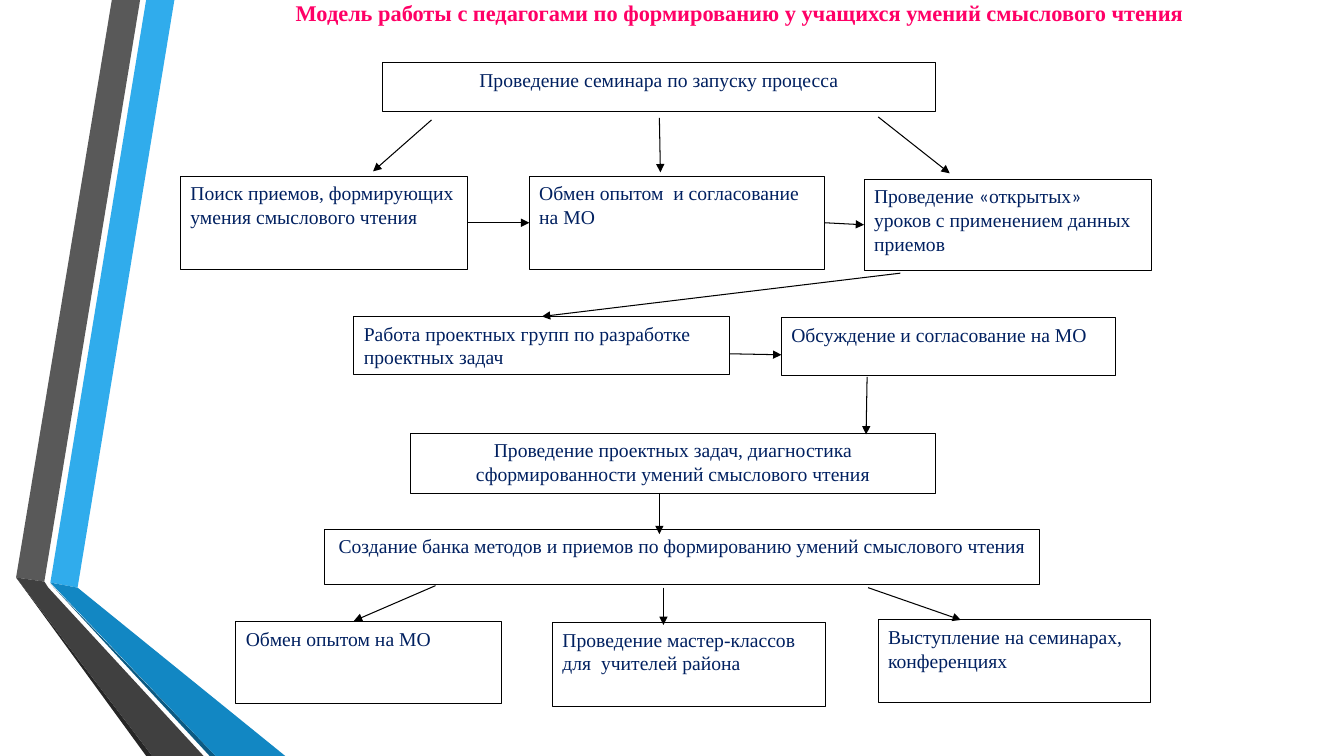
from itertools import groupby

from lxml.etree import SubElement
from pptx import Presentation
from pptx.dml.color import RGBColor
from pptx.enum.shapes import MSO_CONNECTOR, MSO_SHAPE
from pptx.enum.text import MSO_ANCHOR, MSO_AUTO_SIZE, PP_ALIGN
from pptx.oxml.ns import qn
from pptx.util import Inches, Pt

COLORS = {
    "title": "FF0066", "text": "002060", "line": "000000", "box": "FFFFFF",
    "blue": "30ACEC", "blue_fold": "1287C3", "blue_edge": "0C5A82",
    "gray": "595959", "gray_fold": "404040", "gray_edge": "262626",
}
FONT, QUOTE_FONT = "Times New Roman", "Calibri"
TOP, LEFT, BOTTOM, RIGHT = 0, 1, 2, 3


def rgb(name):
    return RGBColor.from_string(COLORS[name])


def grid(*cells):
    """Turn columns or rows of a 0.1 inch grid into lengths."""
    return [Inches(cell / 10) for cell in cells]


class FlowSlide:
    def __init__(self, prs):
        self.slide = prs.slides.add_slide(prs.slide_layouts[5])
        self.shapes = self.slide.shapes

    def style_run(self, r, size, color, font=FONT, bold=False):
        r.font.size, r.font.name, r.font.bold = Pt(size), font, bold
        r.font.color.rgb = rgb(color)

    def title(self, text, at):
        sp = self.shapes.title
        sp.left, sp.top, sp.width, sp.height = grid(*at)
        tf = sp.text_frame
        tf.text = text
        tf.word_wrap, tf.auto_size = True, MSO_AUTO_SIZE.NONE
        tf.vertical_anchor = MSO_ANCHOR.MIDDLE
        tf.margin_top = tf.margin_bottom = 0
        p = tf.paragraphs[0]
        p.alignment = PP_ALIGN.CENTER
        self.style_run(p.runs[0], 16, "title", bold=True)

    def ribbon(self, color, points):
        start, *rest = [grid(*point) for point in points]
        builder = self.shapes.build_freeform(*start)
        builder.add_line_segments(rest, close=True)
        sp = builder.convert_to_shape()
        sp.shadow.inherit = False
        sp.fill.solid()
        sp.fill.fore_color.rgb = rgb(color)
        sp.line.fill.background()

    def box(self, text, at, align=PP_ALIGN.LEFT):
        sp = self.shapes.add_shape(MSO_SHAPE.RECTANGLE, *grid(*at))
        sp.shadow.inherit = False
        sp.fill.solid()
        sp.fill.fore_color.rgb = rgb("box")
        sp.line.color.rgb, sp.line.width = rgb("line"), Pt(0.75)
        tf = sp.text_frame
        tf.word_wrap, tf.vertical_anchor = True, MSO_ANCHOR.TOP
        p = tf.paragraphs[0]
        p.alignment = align
        for is_quote, chars in groupby(text, lambda char: char in "«»"):
            r = p.add_run()
            r.text = "".join(chars)
            self.style_run(r, 14, "text", QUOTE_FONT if is_quote else FONT)
        return sp

    def arrow(self, start, end, begin_at=None, end_at=None):
        """Draw an arrow; begin_at and end_at are (box, side) joints."""
        cxn = self.shapes.add_connector(
            MSO_CONNECTOR.STRAIGHT, *grid(*start, *end))
        if begin_at:
            cxn.begin_connect(*begin_at)
        if end_at:
            cxn.end_connect(*end_at)
        cxn.line.color.rgb, cxn.line.width = rgb("line"), Pt(0.75)
        SubElement(cxn.line._get_or_add_ln(), qn("a:tailEnd"), type="triangle")
        SubElement(cxn._element.spPr, qn("a:effectLst"))


RIBBONS = [
    ("blue", [(5, 57.8), (7.7, 58.3), (17.3, 0), (14.5, 0)]),
    ("gray", [(13.9, 0), (11.1, 0), (1.6, 57.3), (4.4, 57.7)]),
    ("gray_edge", [(1.6, 57.3), (14.5, 75), (15.1, 75)]),
    ("blue_edge", [(5, 57.9), (20.8, 75), (21.4, 75)]),
    ("blue_fold", [(5, 57.8), (21.4, 75), (28.3, 75), (7.7, 58.3)]),
    ("gray_fold", [(20.2, 75), (4.8, 58.3), (4.4, 57.7), (1.6, 57.3),
                   (15.1, 75)]),
]

BOXES = {
    "seminar": ("Проведение семинара по запуску процесса",
                (37.9, 6.2, 54.9, 4.9), PP_ALIGN.CENTER),
    "search": ("Поиск приемов, формирующих умения смыслового чтения",
               (17.9, 17.5, 28.5, 9.2)),
    "exchange": ("Обмен опытом  и согласование на МО",
                 (52.5, 17.5, 29.3, 9.2)),
    "lessons": ("Проведение «открытых» уроков с применением данных приемов",
                (85.7, 17.8, 28.5, 9)),
    "groups": ("Работа проектных групп по разработке проектных задач",
               (35.1, 31.4, 37.3, 5.8)),
    "discussion": ("Обсуждение и согласование на МО",
                   (77.5, 31.5, 33.1, 5.8)),
    "diagnostics": ("Проведение проектных задач, диагностика "
                    "сформированности умений смыслового чтения",
                    (40.7, 43, 52.1, 6), PP_ALIGN.CENTER),
    "bank": ("Создание банка методов и приемов по формированию умений "
             "смыслового чтения", (32.2, 52.5, 70.9, 5.5), PP_ALIGN.CENTER),
    "sharing": ("Обмен опытом на МО", (23.4, 61.7, 26.3, 8.1)),
    "masterclass": ("Проведение мастер-классов для  учителей района",
                    (54.8, 61.8, 27.1, 8.3)),
    "talks": ("Выступление на семинарах, конференциях",
              (87.1, 61.5, 27, 8.2)),
}

FREE_ARROWS = [
    ((42.8, 11.9), (37, 17)),
    ((65.4, 11.7), (65.5, 17.1)),
    ((87.1, 11.6), (94.2, 17.2)),
    ((72.4, 35.1), (77.5, 35.2)),
    ((86, 37.4), (85.9, 43.1)),
    ((65.4, 48.9), (65.4, 53)),
    ((43.2, 58.1), (35.1, 61.6)),
    ((65.8, 58.3), (65.8, 62)),
    ((86.1, 58.3), (95.3, 61.5)),
]


def main():
    prs = Presentation()
    prs.slide_width, prs.slide_height = Inches(13.33), Inches(7.5)
    s = FlowSlide(prs)
    for color, points in RIBBONS:
        s.ribbon(color, points)
    boxes = {name: s.box(*args) for name, args in BOXES.items()}
    for start, end in FREE_ARROWS:
        s.arrow(start, end)
    s.arrow((46.4, 22.1), (52.5, 22.1),
            (boxes["search"], RIGHT), (boxes["exchange"], LEFT))
    s.arrow((81.8, 22.1), (85.7, 22.3),
            (boxes["exchange"], RIGHT), (boxes["lessons"], LEFT))
    s.arrow((89.3, 27.1), (53.7, 31.4), end_at=(boxes["groups"], TOP))
    s.title("Модель работы с педагогами по формированию у учащихся "
            "умений смыслового чтения", (16.7, 0, 113.3, 2.5))
    prs.save("out.pptx")


if __name__ == "__main__":
    main()
